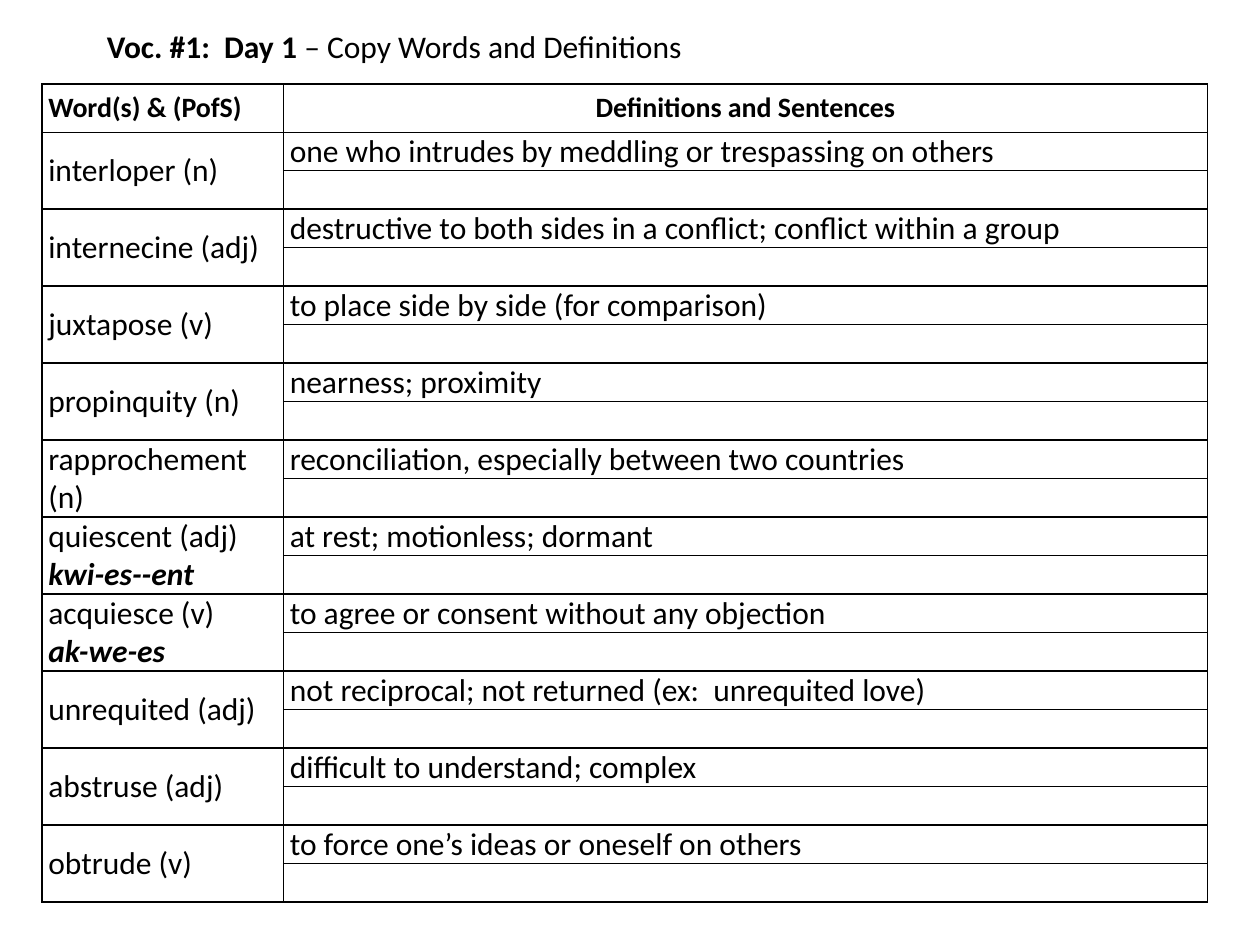
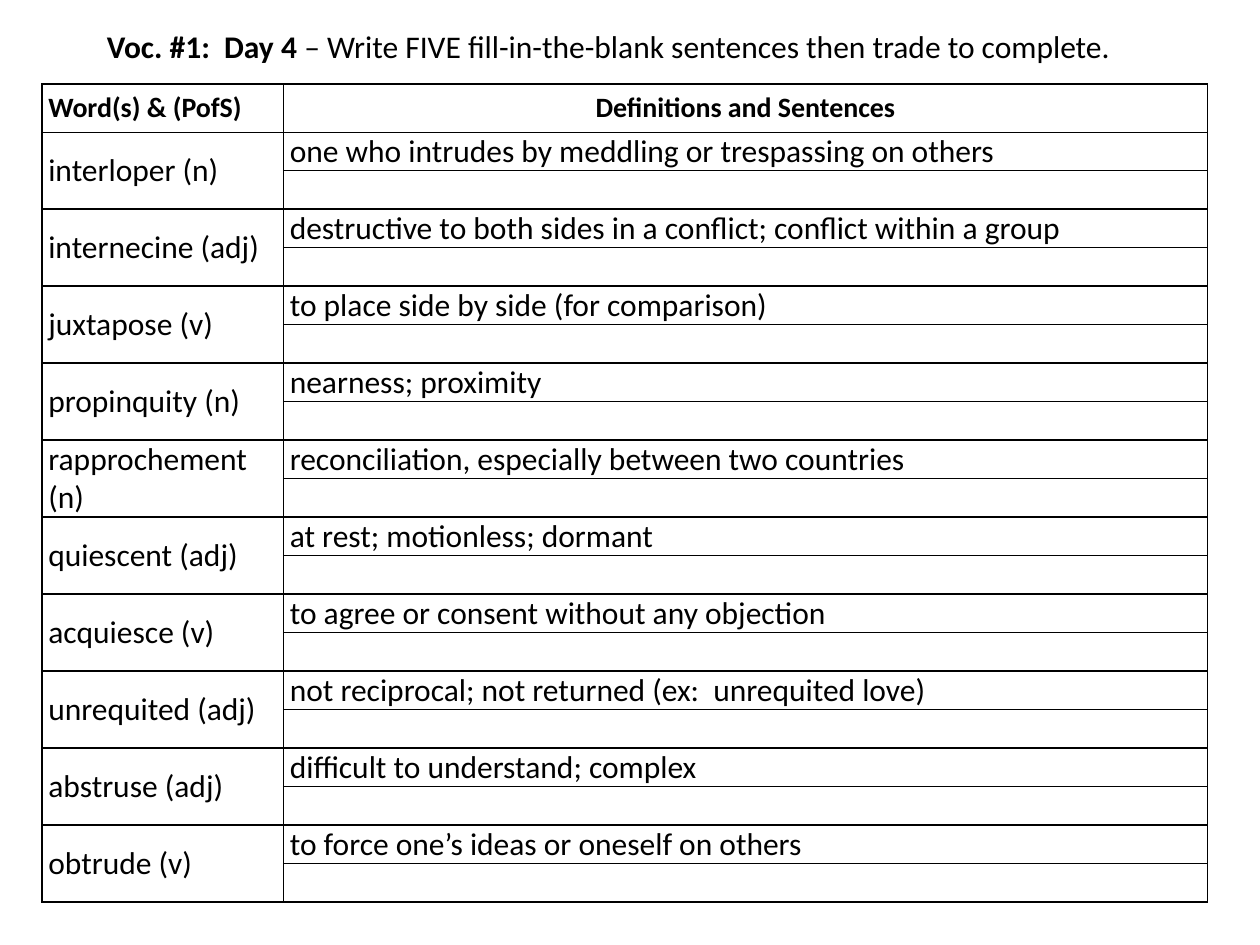
from lxml.etree import SubElement
from pptx import Presentation
from pptx.dml.color import RGBColor
from pptx.enum.text import MSO_ANCHOR, PP_ALIGN
from pptx.oxml.ns import qn
from pptx.util import Pt

BLACK = RGBColor(0, 0, 0)
WHITE = RGBColor(255, 255, 255)
FONT = "Calibri"
HEADER_SIZE = 16
BODY_SIZE = 18
BORDER_WIDTH = 1
TITLE_INDENT = 36
COLUMN_WIDTHS = (138, 528)
HEADER_HEIGHT = 27.6
LINE_HEIGHT = 22

HEADERS = (("Word(s) & (PofS)", PP_ALIGN.LEFT), ("Definitions and Sentences", PP_ALIGN.CENTER))
VOCABULARY = (
    ("interloper (n)", "one who intrudes by meddling or trespassing on others"),
    ("internecine (adj)", "destructive to both sides in a conflict; conflict within a group"),
    ("juxtapose (v)", "to place side by side (for comparison)"),
    ("propinquity (n)", "nearness; proximity"),
    ("rapprochement (n)", "reconciliation, especially between two countries"),
    ("quiescent (adj)", "at rest; motionless; dormant"),
    ("acquiesce (v)", "to agree or consent without any objection"),
    ("unrequited (adj)", "not reciprocal; not returned (ex:  unrequited love)"),
    ("abstruse (adj)", "difficult to understand; complex"),
    ("obtrude (v)", "to force one’s ideas or oneself on others"),
)
PRONUNCIATIONS = {"quiescent (adj)": "kwi-es--ent", "acquiesce (v)": "ak-we-es"}


def add_text(paragraph, text, size=BODY_SIZE, bold=False, italic=False, align=PP_ALIGN.LEFT):
    paragraph.alignment = align
    run = paragraph.add_run()
    run.text = text
    font = run.font
    font.name = FONT
    font.size = Pt(size)
    font.bold = bold
    font.italic = italic
    font.color.rgb = BLACK


def add_title(slide, day, task, width):
    box = slide.shapes.add_textbox(Pt(18), Pt(12), Pt(width), Pt(29))
    frame = box.text_frame
    frame.word_wrap = True
    frame.vertical_anchor = MSO_ANCHOR.MIDDLE
    paragraph = frame.paragraphs[0]
    add_text(paragraph, f"Voc. #1:  {day} ", bold=True)
    add_text(paragraph, f"– {task}")
    properties = paragraph._p.get_or_add_pPr()
    properties.set("marL", "0")
    properties.set("indent", str(Pt(TITLE_INDENT)))


def add_borders(cell):
    properties = cell._tc.get_or_add_tcPr()
    for side in ("a:lnL", "a:lnR", "a:lnT", "a:lnB"):
        line = SubElement(properties, qn(side), w=str(Pt(BORDER_WIDTH)))
        fill = SubElement(line, qn("a:solidFill"))
        SubElement(fill, qn("a:srgbClr"), val=str(BLACK))


def format_cell(cell):
    cell.margin_left = cell.margin_right = Pt(3.6)
    cell.margin_top = cell.margin_bottom = 0
    cell.vertical_anchor = MSO_ANCHOR.MIDDLE
    add_borders(cell)
    cell.fill.solid()
    cell.fill.fore_color.rgb = WHITE


def add_vocabulary_table(slide, pronunciations):
    """Give each word two lines: its definition and an empty one for a sentence."""
    row_count = 1 + 2 * len(VOCABULARY)
    height = HEADER_HEIGHT + LINE_HEIGHT * (row_count - 1)
    table = slide.shapes.add_table(
        row_count, 2, Pt(24), Pt(48), Pt(sum(COLUMN_WIDTHS)), Pt(height)
    ).table
    table.first_row = False
    table.horz_banding = False
    for column, width in zip(table.columns, COLUMN_WIDTHS):
        column.width = Pt(width)
    for index, row in enumerate(table.rows):
        row.height = Pt(LINE_HEIGHT if index else HEADER_HEIGHT)
        for cell in row.cells:
            format_cell(cell)

    for column, (header, align) in enumerate(HEADERS):
        paragraph = table.cell(0, column).text_frame.paragraphs[0]
        add_text(paragraph, header, size=HEADER_SIZE, bold=True, align=align)
    for index, (word, definition) in enumerate(VOCABULARY):
        top = 1 + 2 * index
        word_cell = table.cell(top, 0)
        word_cell.merge(table.cell(top + 1, 0))
        word_frame = word_cell.text_frame
        add_text(word_frame.paragraphs[0], word)
        if word in pronunciations:
            add_text(word_frame.add_paragraph(), pronunciations[word], bold=True, italic=True)
        add_text(table.cell(top, 1).text_frame.paragraphs[0], definition)


def add_vocabulary_slide(presentation, day, task, title_width, pronunciations):
    slide = presentation.slides.add_slide(presentation.slide_layouts[6])
    add_vocabulary_table(slide, pronunciations)
    add_title(slide, day, task, title_width)


def main():
    presentation = Presentation()
    presentation.slide_width = Pt(720)
    presentation.slide_height = Pt(540)
    add_vocabulary_slide(
        presentation, "Day 1", "Copy Words and Definitions", 384, PRONUNCIATIONS
    )
    add_vocabulary_slide(
        presentation,
        "Day 4",
        "Write FIVE fill-in-the-blank sentences then trade to complete.",
        636,
        {},
    )
    presentation.save("out.pptx")


if __name__ == "__main__":
    main()
